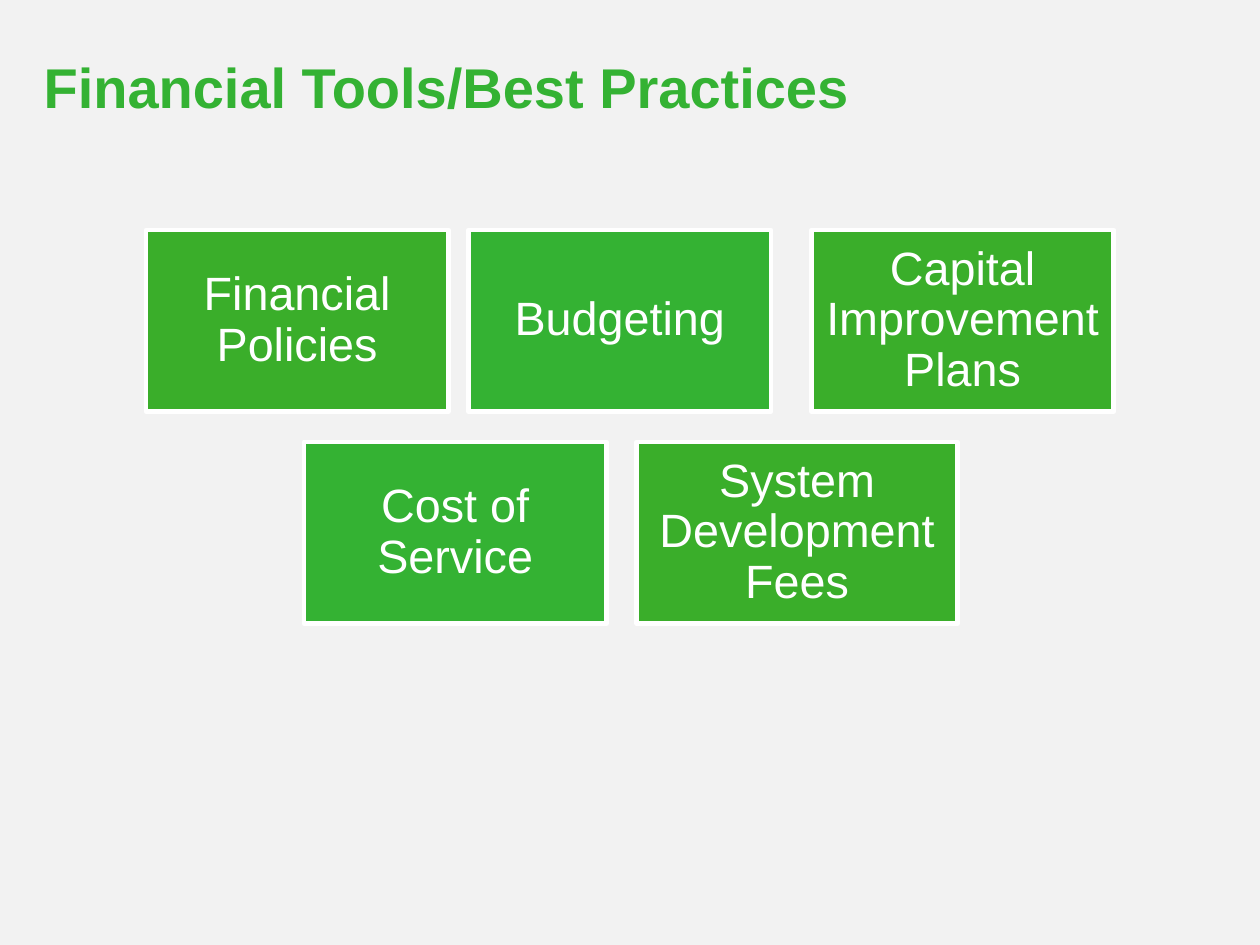
from pptx import Presentation
from pptx.dml.color import RGBColor as Rgb
from pptx.enum.shapes import MSO_SHAPE as Shape
from pptx.enum.text import MSO_ANCHOR as Anchor, PP_ALIGN as Align
from pptx.util import Pt

GREEN, LEAF, WHITE = "34B233", "3AAE2A", "FFFFFF"
TOOLS = [
    ("Financial Policies", 0, 0, 129.6),
    ("Budgeting", 138.3, 0, 129.6),
    ("Capital Improvement Plans", 285.2, 0, 129.6),
    ("Cost of Service", 67.7, 90.8, 129.6),
    ("System Development Fees", 210.3, 90.8, 137.5),
]


def paint(target, color):
    target.rgb = Rgb.from_string(color)


def style(para, size, color, bold=False):
    for run in para.runs:
        font = run.font
        font.name, font.size, font.bold = "Arial", Pt(size), bold
        paint(font.color, color)


def add_title(slide, left, top, width, height):
    title = slide.shapes.title
    title.left, title.top = Pt(left), Pt(top)
    title.width, title.height = Pt(width), Pt(height)
    frame = title.text_frame
    frame.text = "Financial Tools/Best Practices"
    frame.word_wrap = True
    frame.vertical_anchor = Anchor.MIDDLE
    para = frame.paragraphs[0]
    para.alignment = Align.LEFT
    style(para, 24, GREEN, True)


def add_card(slide, text, color, left, top, width, height):
    card = slide.shapes.add_shape(
        Shape.RECTANGLE, Pt(left), Pt(top), Pt(width), Pt(height))
    card.shadow.inherit = False
    card.fill.solid()
    paint(card.fill.fore_color, color)
    card.line.width = Pt(2)
    paint(card.line.color, WHITE)
    frame = card.text_frame
    frame.text = text
    frame.word_wrap = True
    frame.vertical_anchor = Anchor.MIDDLE
    frame.margin_left = frame.margin_right = Pt(6)
    frame.margin_top = frame.margin_bottom = Pt(6)
    para = frame.paragraphs[0]
    para.alignment = Align.CENTER
    para.line_spacing = 0.9
    style(para, 20, WHITE)


def add_tools(slide, left, top, height):
    for i, (text, across, down, width) in enumerate(TOOLS):
        color = GREEN if i % 2 else LEAF
        add_card(slide, text, color, left + across, top + down, width, height)


def main():
    deck = Presentation()
    deck.slide_width, deck.slide_height = Pt(540), Pt(405)
    slide = deck.slides.add_slide(deck.slide_layouts[5])
    fill = slide.background.fill
    fill.solid()
    paint(fill.fore_color, "F2F2F2")
    add_title(slide, 11.5, 12.2, 523.4, 49)
    add_tools(slide, 62.6, 98.6, 77.8)
    deck.save("out.pptx")


if __name__ == "__main__":
    main()
